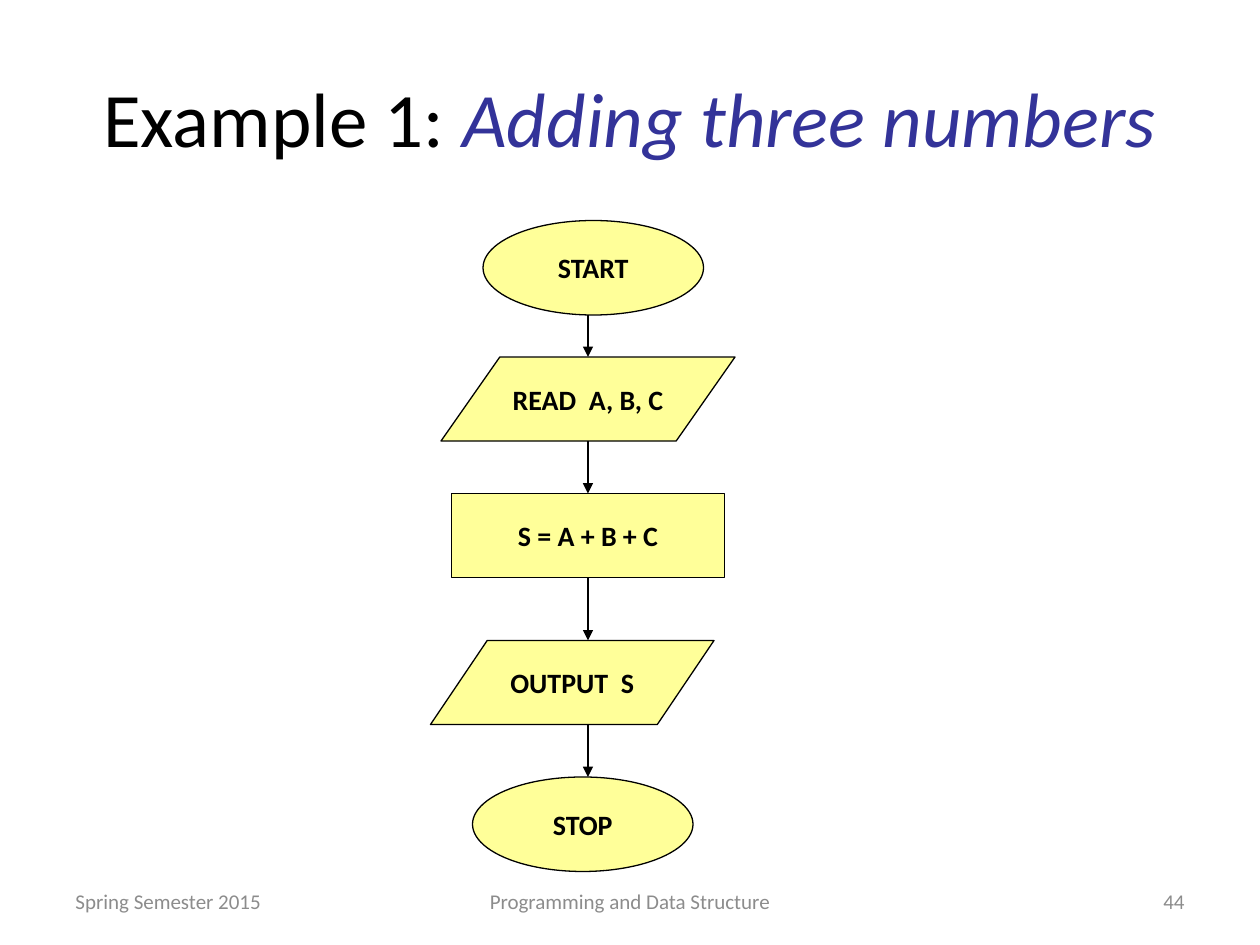
import dataclasses

import pptx
import pptx.dml.color
import pptx.enum.shapes
import pptx.enum.text
import pptx.oxml
import pptx.oxml.ns
import pptx.util

MSO = pptx.enum.shapes.MSO_SHAPE
ALIGN = pptx.enum.text.PP_ALIGN


@dataclasses.dataclass(frozen=True)
class Theme:
    font: str = "Calibri"
    ink: str = "000000"
    accent: str = "333399"
    muted: str = "8C8C8C"
    node_fill: str = "FFFF99"
    title_size: int = 44
    node_size: int = 16
    footer_size: int = 12
    line_width: float = 0.75


def rgb(value):
    return pptx.dml.color.RGBColor.from_string(value)


class Deck:
    """Holds the theme and current slide; lengths are grid cells of 1/12 inch."""

    COLS, ROWS = 120, 90

    def __init__(self, theme):
        self.theme = theme
        self.prs = pptx.Presentation()
        self.prs.slide_width = pptx.util.Inches(10)
        self.prs.slide_height = pptx.util.Inches(7.5)
        self.s = self.prs.slides.add_slide(self.prs.slide_layouts[5])

    def x(self, cols):
        return round(self.prs.slide_width * cols / self.COLS)

    def y(self, rows):
        return round(self.prs.slide_height * rows / self.ROWS)

    def box(self, col, row, width, height):
        return self.x(col), self.y(row), self.x(width), self.y(height)

    def run(self, p, text, size, color, bold=False, italic=False):
        r = p.add_run()
        r.text = text
        r.font.name = self.theme.font
        r.font.size = pptx.util.Pt(size)
        r.font.color.rgb = rgb(color)
        r.font.bold = bold
        r.font.italic = italic

    def paragraph(self, sp, align, wrap=True):
        tf = sp.text_frame
        tf.word_wrap = wrap
        tf.vertical_anchor = pptx.enum.text.MSO_ANCHOR.MIDDLE
        p = tf.paragraphs[0]
        p.alignment = align
        return p

    def title(self, cells, label, topic):
        sp = self.s.shapes.title
        sp.left, sp.top, sp.width, sp.height = self.box(*cells)
        p = self.paragraph(sp, ALIGN.CENTER)
        self.run(p, label, self.theme.title_size, self.theme.ink)
        self.run(p, topic, self.theme.title_size, self.theme.accent, italic=True)

    def footer(self, cells, text, align):
        sp = self.s.shapes.add_textbox(*self.box(*cells))
        p = self.paragraph(sp, align)
        self.run(p, text, self.theme.footer_size, self.theme.muted)

    def node(self, kind, cells, text):
        sp = self.s.shapes.add_shape(kind, *self.box(*cells))
        sp.shadow.inherit = False
        sp.fill.solid()
        sp.fill.fore_color.rgb = rgb(self.theme.node_fill)
        self.outline(sp.line)
        p = self.paragraph(sp, ALIGN.CENTER, wrap=False)
        self.run(p, text, self.theme.node_size, self.theme.ink, bold=True)
        return sp

    def outline(self, line):
        line.color.rgb = rgb(self.theme.ink)
        line.width = pptx.util.Pt(self.theme.line_width)

    def arrow(self, col, upper, lower):
        cx = self.s.shapes.add_connector(
            pptx.enum.shapes.MSO_CONNECTOR.STRAIGHT,
            self.x(col), upper.top + upper.height, self.x(col), lower.top)
        self.outline(cx.line)
        head = pptx.oxml.parse_xml(
            f'<a:tailEnd {pptx.oxml.ns.nsdecls("a")} type="triangle"/>')
        cx.line._get_or_add_ln().append(head)
        cx._element.spPr.append(pptx.oxml.parse_xml(
            f'<a:effectLst {pptx.oxml.ns.nsdecls("a")}/>'))
        # Only rectangles have their side middles as numbered sites
        if upper.auto_shape_type == MSO.RECTANGLE:
            cx.begin_connect(upper, 2)
        if lower.auto_shape_type == MSO.RECTANGLE:
            cx.end_connect(lower, 0)


def main():
    deck = Deck(Theme())
    deck.title((6, 3.6, 108, 15), "Example 1: ", "Adding three numbers")

    # Footer line
    for col, width, text, align in (
            (6, 28, "Spring Semester 2015", ALIGN.LEFT),
            (41, 38, "Programming and Data Structure", ALIGN.CENTER),
            (86, 28, "44", ALIGN.RIGHT)):
        deck.footer((col, 83.4, width, 4.8), text, align)

    # Flowchart steps, from top to bottom
    steps = [deck.node(*step) for step in (
        (MSO.OVAL, (46, 21, 21, 9), "START"),
        (MSO.FLOWCHART_DATA, (42, 34, 28, 8), "READ  A, B, C"),
        (MSO.RECTANGLE, (43, 47, 26, 8), "S = A + B + C"),
        (MSO.FLOWCHART_DATA, (41, 61, 27, 8), "OUTPUT  S"),
        (MSO.OVAL, (45, 74, 21, 9), "STOP"))]

    # Arrows run down one shared axis
    for upper, lower in zip(steps, steps[1:]):
        deck.arrow(56, upper, lower)

    deck.prs.save("out.pptx")


if __name__ == "__main__":
    main()
